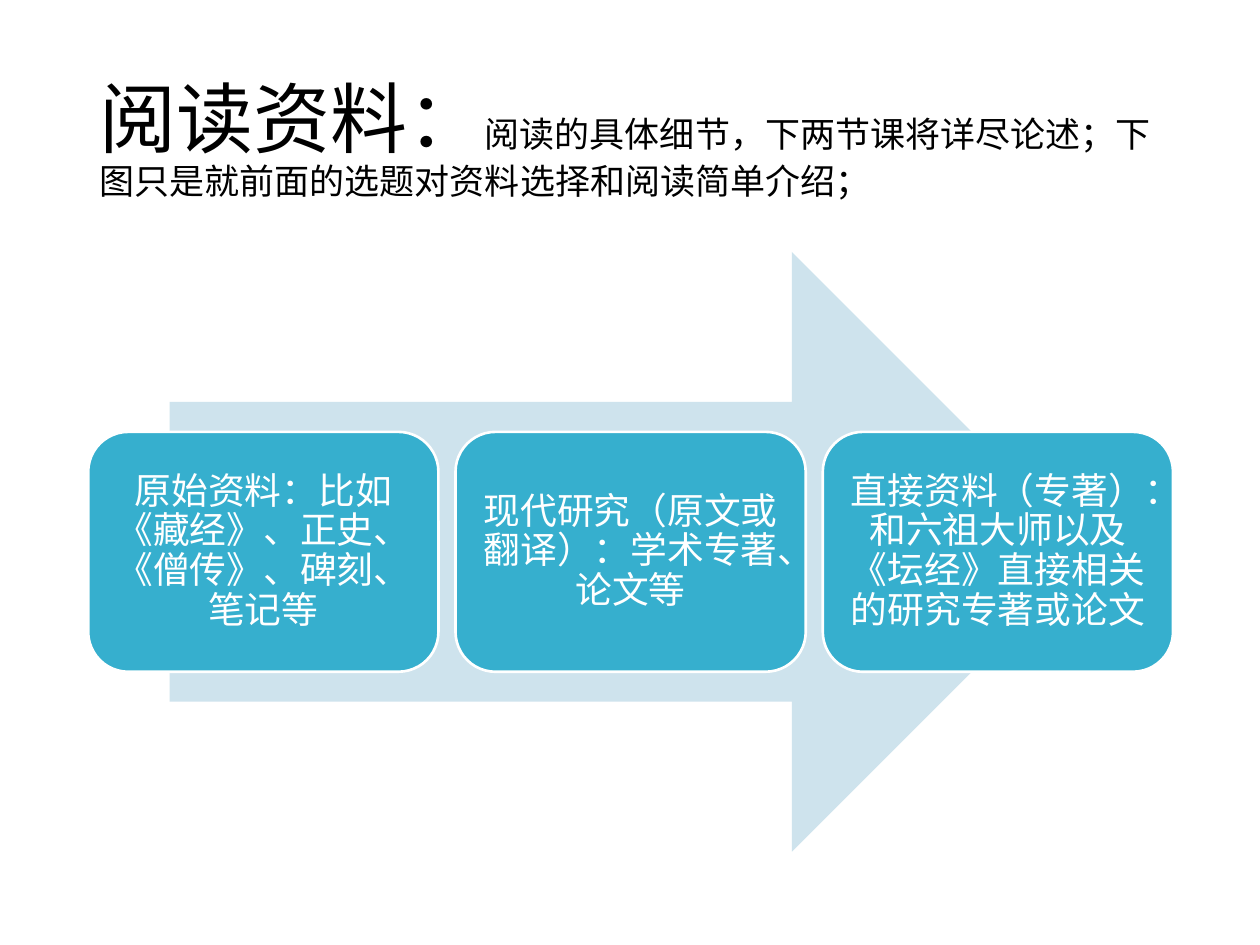
from pptx import Presentation
from pptx.dml.color import RGBColor
from pptx.enum.shapes import MSO_SHAPE as Shape
from pptx.enum.text import MSO_ANCHOR as Anchor, PP_ALIGN as Align
from pptx.util import Inches, Pt

BLACK = RGBColor(0x00, 0x00, 0x00)
WHITE = RGBColor(0xFF, 0xFF, 0xFF)
PALE_BLUE = RGBColor(0xCE, 0xE3, 0xED)
TEAL = RGBColor(0x36, 0xAF, 0xCE)
FONT = "Times New Roman"

TITLE = "阅读资料："
SUBTITLE = "阅读的具体细节，下两节课将详尽论述；下图只是就前面的选题对资料选择和阅读简单介绍；"
SOURCES = [
    "原始资料：比如《藏经》、正史、《僧传》、碑刻、笔记等",
    "现代研究（原文或翻译）：学术专著、论文等",
    "直接资料（专著）：和六祖大师以及《坛经》直接相关的研究专著或论文",
]


def style_paragraph(para, color):
    """Give a paragraph the common font and line spacing."""
    para.line_spacing = 0.9
    para.font.name = FONT
    para.font.color.rgb = color


def add_heading(page, left, top, width, height):
    """Write the large title followed by the smaller explanation."""
    box = page.shapes.add_textbox(left, top, width, height)
    frame = box.text_frame
    frame.word_wrap = True
    frame.vertical_anchor = Anchor.MIDDLE
    para = frame.paragraphs[0]
    style_paragraph(para, BLACK)
    for text, size in ((TITLE, 44), (SUBTITLE, 20)):
        span = para.add_run()
        span.text = text
        span.font.size = Pt(size)


def add_filled_shape(page, kind, box, color):
    """Draw a flat shape without outline or shadow."""
    shape = page.shapes.add_shape(kind, *box)
    shape.shadow.inherit = False
    shape.fill.solid()
    shape.fill.fore_color.rgb = color
    shape.line.fill.background()
    return shape


def add_card(page, box, text):
    """Draw one rounded card with its centred text."""
    card = add_filled_shape(page, Shape.ROUNDED_RECTANGLE, box, TEAL)
    card.line.color.rgb = WHITE
    card.line.width = Pt(1.5)
    frame = card.text_frame
    frame.word_wrap = True
    frame.vertical_anchor = Anchor.MIDDLE
    frame.margin_left = frame.margin_right = Inches(0.09)
    frame.margin_top = frame.margin_bottom = Inches(0.09)
    para = frame.paragraphs[0]
    para.text = text
    para.alignment = Align.CENTER
    para.font.size = Pt(21)
    style_paragraph(para, WHITE)


def add_process(page, left, top, width, height):
    """Place a row of cards over a broad arrow."""
    arrow_width = int(width * 0.85)
    arrow_left = left + (width - arrow_width) // 2
    arrow_box = (arrow_left, top, arrow_width, height)
    add_filled_shape(page, Shape.RIGHT_ARROW, arrow_box, PALE_BLUE)
    card_width = Inches(2.78)
    card_height = int(height * 0.4)
    card_top = top + (height - card_height) // 2
    step = (width - card_width) // (len(SOURCES) - 1)
    for index, text in enumerate(SOURCES):
        box = (left + index * step, card_top, card_width, card_height)
        add_card(page, box, text)


def main():
    """Build the slide and save the deck."""
    deck = Presentation()
    deck.slide_width = Inches(10)
    deck.slide_height = Inches(7.5)
    page = deck.slides.add_slide(deck.slide_layouts[6])
    add_heading(page, Inches(0.69), Inches(0.4), Inches(8.62), Inches(1.45))
    add_process(page, Inches(0.7), Inches(2), Inches(8.61), Inches(4.76))
    deck.save("out.pptx")


if __name__ == "__main__":
    main()
